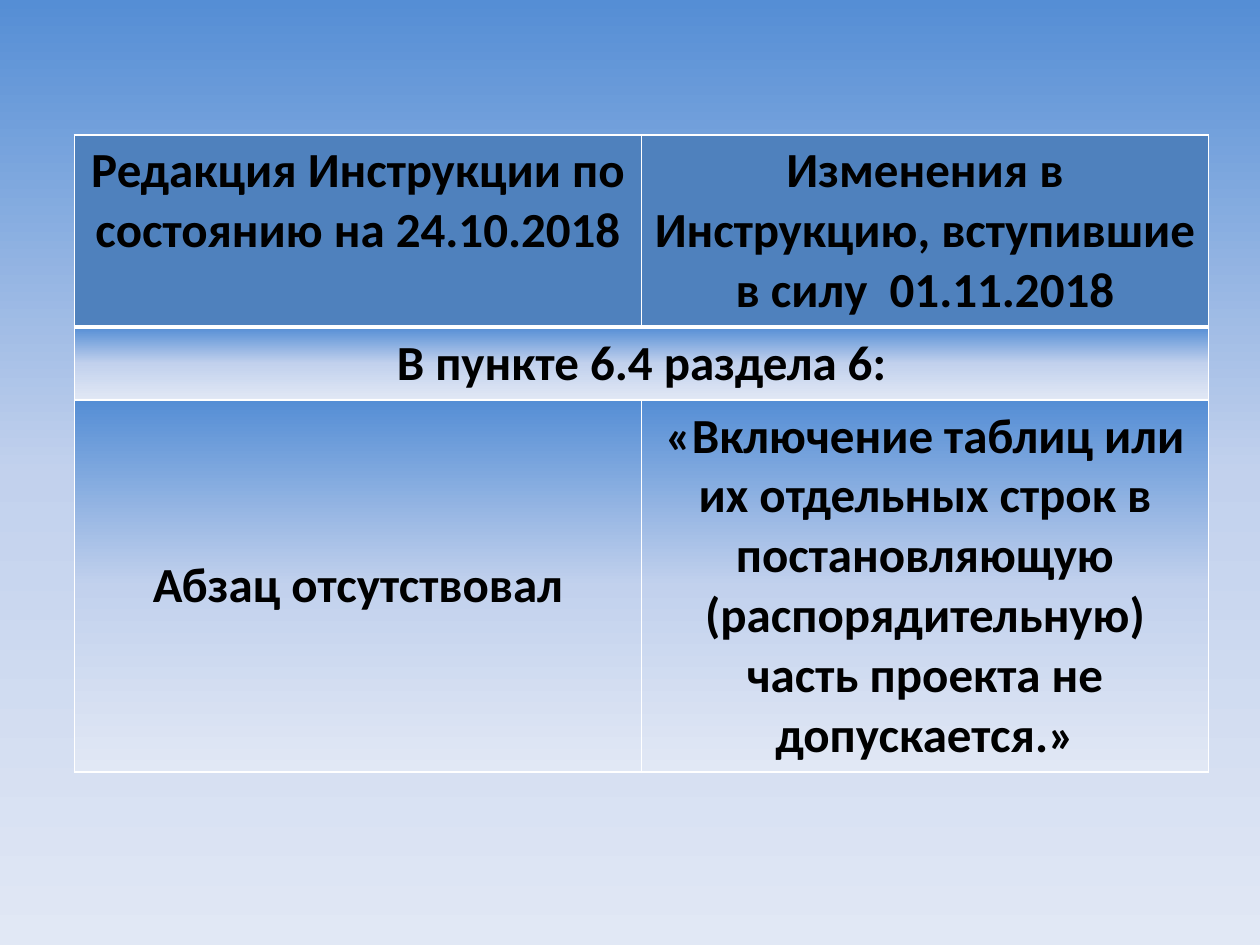
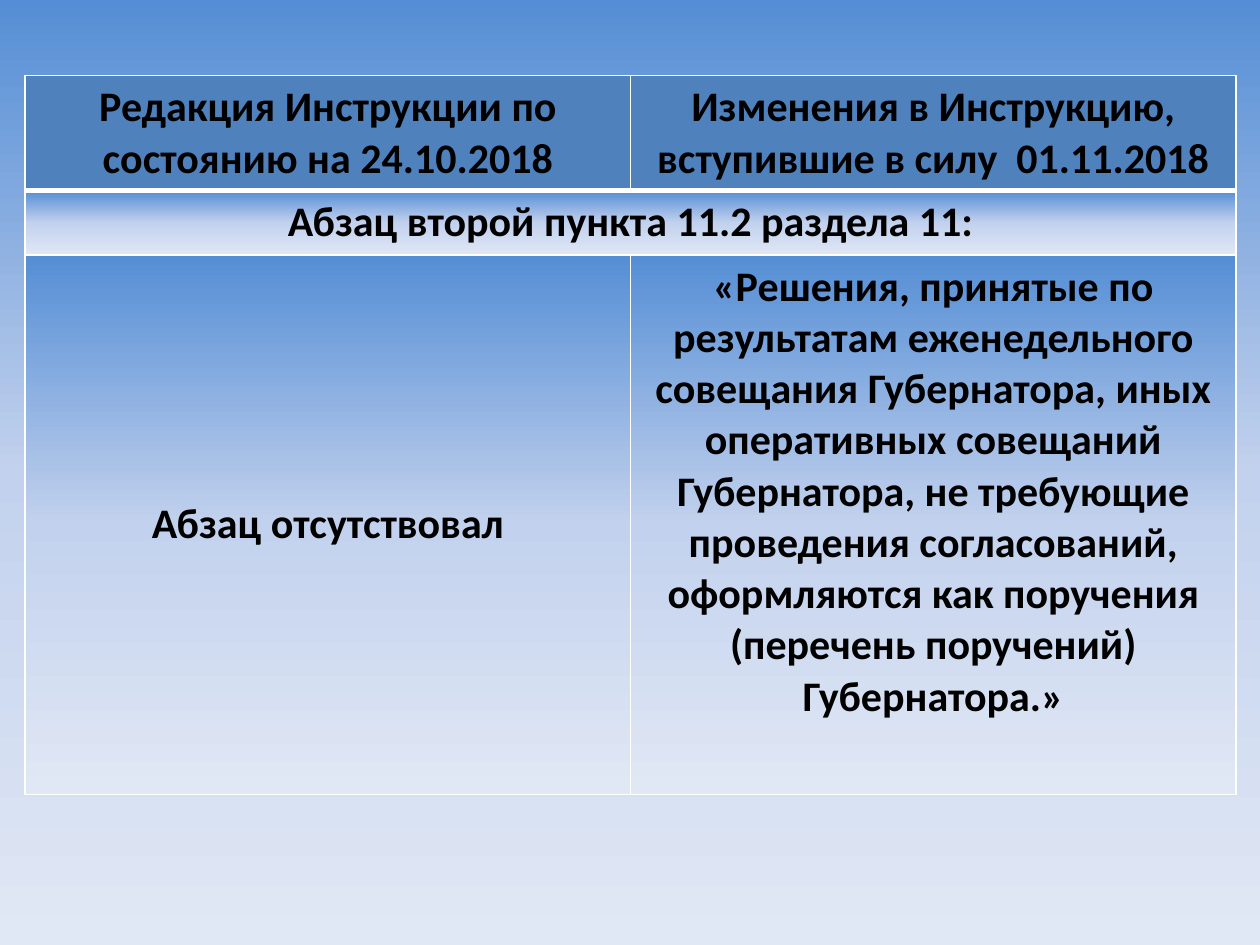
from lxml import etree
from pptx import Presentation
from pptx import util as u
from pptx.dml.color import RGBColor
from pptx.enum import text
from pptx.oxml.ns import qn

HUES = {"ink": "000000", "head": "4F81BD", "rule": "FFFFFF",
        "top": "558ED5", "mid": "C2D1ED", "low": "E1E8F5"}
FADE = [("top", 0), ("mid", 50), ("low", 100)]
FONT = "Calibri"
COLS, ROWS = 100, 75  # grid units across and down the slide
HEADS = ["Редакция Инструкции по состоянию на 24.10.2018",
         "Изменения в Инструкцию, вступившие в силу  01.11.2018"]
ABSENT = "Абзац отсутствовал"


def tint(node, hue):
    etree.SubElement(node, qn("a:srgbClr"), val=HUES[hue])


def fade(fill, host):
    """Fill host with the shared gradient, running from top to bottom."""
    fill.gradient()
    fill.gradient_angle = 270
    stops = host.find(".//" + qn("a:gsLst"))
    for stop in list(stops):
        stops.remove(stop)
    for hue, share in FADE:
        tint(etree.SubElement(stops, qn("a:gs"), pos=str(share * 1000)), hue)


def edge(cell, **widths):
    """Draw the cell borders; widths are points by side (L, R, T, B)."""
    props = cell._tc.get_or_add_tcPr()
    for side in "LRTB":
        line = etree.SubElement(props, qn("a:ln" + side),
                                w=str(u.Pt(widths.get(side, 1))))
        tint(etree.SubElement(line, qn("a:solidFill")), "rule")


def write(cell, words, size, hue="ink", bold=True, mid=False):
    anchor = text.MSO_ANCHOR
    cell.vertical_anchor = anchor.MIDDLE if mid else anchor.TOP
    para = cell.text_frame.paragraphs[0]
    para.alignment = text.PP_ALIGN.CENTER
    run = para.add_run()
    run.text = words
    font = run.font
    font.name, font.size, font.bold = FONT, u.Pt(size), bold
    font.color.rgb = RGBColor.from_string(HUES[hue])


class Deck:
    def __init__(self):
        self.prs = Presentation()
        self.prs.slide_width, self.prs.slide_height = u.Inches(10), u.Inches(7.5)
        self.slide = None

    def across(self, cols):
        return round(self.prs.slide_width * cols / COLS)

    def down(self, rows):
        return round(self.prs.slide_height * rows / ROWS)

    def page(self):
        self.slide = self.prs.slides.add_slide(self.prs.slide_layouts[6])
        fade(self.slide.background.fill, self.slide._element)

    def compare(self, left, top, width, heights, size, clause, change):
        """Table of the old and new wording of one clause."""
        table = self.slide.shapes.add_table(
            3, 2, self.across(left), self.down(top),
            self.across(width), self.down(sum(heights))).table
        table.first_row = table.horz_banding = False
        for col in table.columns:
            col.width = self.across(width / 2)
        for row, height in zip(table.rows, heights):
            row.height = self.down(height)
        table.cell(1, 0).merge(table.cell(1, 1))

        for r, line in enumerate([HEADS, [clause, ""], [ABSENT, change]]):
            for c, words in enumerate(line):
                cell = table.cell(r, c)
                edge(cell, T=3 if r == 1 else 1, B=3 if r == 0 else 1)
                if r == 0:
                    cell.fill.solid()
                    cell.fill.fore_color.rgb = RGBColor.from_string(HUES["head"])
                else:
                    fade(cell.fill, cell._tc)
                if words:
                    write(cell, words, size, mid=words == ABSENT)


def main():
    deck = Deck()
    deck.page()
    deck.compare(5.9, 10.7, 90, [15.2, 5.8, 29.5], 28,
                 "В пункте 6.4 раздела 6:",
                 "«Включение таблиц или их отдельных строк в постановляющую "
                 "(распорядительную) часть проекта не допускается.»")
    deck.page()
    deck.compare(2, 6, 96.1, [9.1, 5.1, 42.8], 24,
                 "Абзац второй пункта 11.2 раздела 11:",
                 "«Решения, принятые по результатам еженедельного совещания "
                 "Губернатора, иных оперативных совещаний Губернатора, "
                 "не требующие проведения согласований, оформляются как "
                 "поручения (перечень поручений) Губернатора.»")
    deck.prs.save("out.pptx")


if __name__ == "__main__":
    main()
